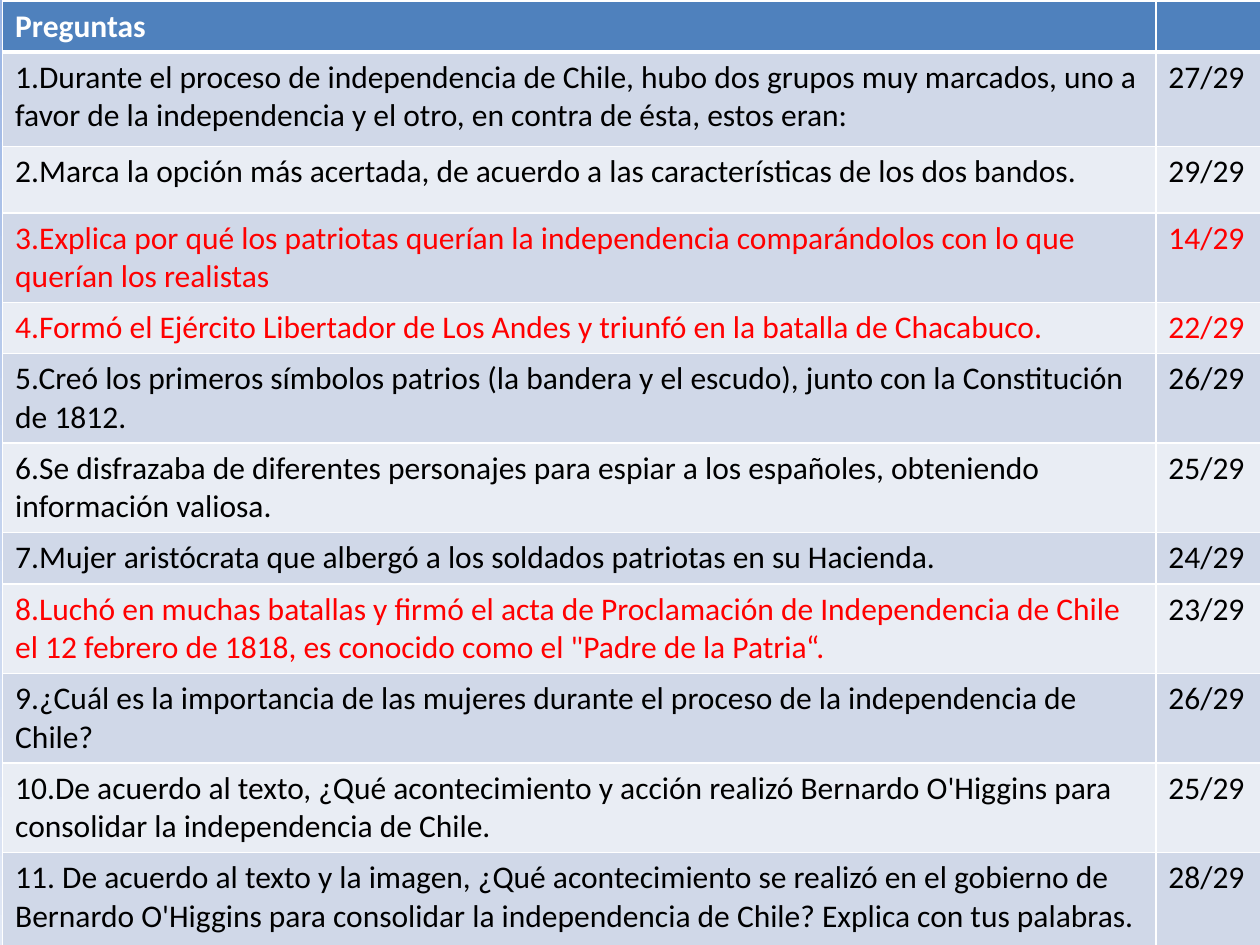
from copy import deepcopy

from lxml import etree
from pptx import Presentation
from pptx.dml.color import RGBColor
from pptx.oxml import ns
from pptx.util import Pt

WHITE = RGBColor(0xFF, 0xFF, 0xFF)
BLACK = RGBColor(0x00, 0x00, 0x00)
RED = RGBColor(0xFF, 0x00, 0x00)
BLUE = RGBColor(0x4F, 0x81, 0xBD)
BANDS = RGBColor(0xD0, 0xD8, 0xE8), RGBColor(0xE9, 0xED, 0xF4)
SKY = RGBColor(0x9A, 0xB5, 0xE4), RGBColor(0xC2, 0xD1, 0xED), RGBColor(0xE1, 0xE8, 0xF5)

WIDTHS = 659, 60
ROWS = [
    ("Preguntas", "", 29, WHITE, WHITE),
    ("1.Durante el proceso de independencia de Chile, hubo dos grupos muy marcados, uno a "
     "favor de la independencia y el otro, en contra de ésta, estos eran:", "27/29", 54, BLACK, BLACK),
    ("2.Marca la opción más acertada, de acuerdo a las características de los dos bandos.",
     "29/29", 38, BLACK, BLACK),
    ("3.Explica por qué los patriotas querían la independencia comparándolos con lo que "
     "querían los realistas", "14/29", 50, RED, RED),
    ("4.Formó el Ejército Libertador de Los Andes y triunfó en la batalla de Chacabuco.",
     "22/29", 29, RED, RED),
    ("5.Creó los primeros símbolos patrios (la bandera y el escudo), junto con la Constitución "
     "de 1812.", "26/29", 50, BLACK, BLACK),
    ("6.Se disfrazaba de diferentes personajes para espiar a los españoles, obteniendo "
     "información valiosa.", "25/29", 50, BLACK, BLACK),
    ("7.Mujer aristócrata que albergó a los soldados patriotas en su Hacienda.",
     "24/29", 29, BLACK, BLACK),
    ("8.Luchó en muchas batallas y firmó el acta de Proclamación de Independencia de Chile "
     "el 12 febrero de 1818, es conocido como el \"Padre de la Patria“.", "23/29", 50, RED, BLACK),
    ("9.¿Cuál es la importancia de las mujeres durante el proceso de la independencia de "
     "Chile?", "26/29", 50, BLACK, BLACK),
    ("10.De acuerdo al texto, ¿Qué acontecimiento y acción realizó Bernardo O'Higgins para "
     "consolidar la independencia de Chile.", "25/29", 50, BLACK, BLACK),
    ("11. De acuerdo al texto y la imagen, ¿Qué acontecimiento se realizó en el gobierno de "
     "Bernardo O'Higgins para consolidar la independencia de Chile? Explica con tus palabras.",
     "28/29", 63, BLACK, BLACK),
]


def write(frame, words, font="Calibri", size=18, color=BLACK, bold=False):
    """Put one formatted run into a text frame."""
    run = frame.paragraphs[0].add_run()
    run.text = words
    run.font.name = font
    run.font.size = Pt(size)
    run.font.bold = bold
    run.font.color.rgb = color


class Quiz:
    """Hold the table style and the current slide."""

    thin, thick = 1, 3

    def __init__(self, slide):
        """Keep the slide to draw on."""
        self.slide = slide

    def sky(self, colors):
        """Fill the background from top to bottom with three colours."""
        fill = self.slide.background.fill
        fill.gradient()
        fill.gradient_angle = 270
        first = next(self.slide.element.iter(ns.qn("a:gs")))
        first.addnext(deepcopy(first))
        for stop, color, place in zip(fill.gradient_stops, colors, (0, 0.5, 1)):
            stop.color.rgb = color
            stop.position = place

    def edge(self, cell, side, width):
        """Draw one white border of a cell."""
        props = cell._tc.get_or_add_tcPr()
        line = etree.SubElement(props, ns.qn(f"a:ln{side}"), w=str(Pt(width)))
        solid = etree.SubElement(line, ns.qn("a:solidFill"))
        etree.SubElement(solid, ns.qn("a:srgbClr"), val=str(WHITE))

    def cell(self, cell, words, row, color):
        """Style one cell and write its words."""
        for side in "LRTB":
            heavy = (row, side) in ((0, "B"), (1, "T"))
            self.edge(cell, side, self.thick if heavy else self.thin)
        cell.fill.solid()
        cell.fill.fore_color.rgb = BANDS[(row - 1) % 2] if row else BLUE
        if words:
            write(cell.text_frame, words, color=color, bold=row == 0)

    def table(self, left, top, widths, rows):
        """Add the table of questions and scores."""
        high = sum(row[2] for row in rows)
        grid = self.slide.shapes.add_table(
            len(rows), len(widths), Pt(left), Pt(top), Pt(sum(widths)), Pt(high)).table
        for col, width in zip(grid.columns, widths):
            col.width = Pt(width)
        for num, (ask, score, height, ink, tint) in enumerate(rows):
            grid.rows[num].height = Pt(height)
            self.cell(grid.cell(num, 0), ask, num, ink)
            self.cell(grid.cell(num, 1), score, num, tint)


def main():
    """Build the slide and save it."""
    deck = Presentation()
    deck.slide_width, deck.slide_height = Pt(720), Pt(540)
    quiz = Quiz(deck.slides.add_slide(deck.slide_layouts[6]))
    quiz.sky(SKY)
    quiz.table(1.5, 0.5, WIDTHS, ROWS)
    deck.save("out.pptx")


if __name__ == "__main__":
    main()
